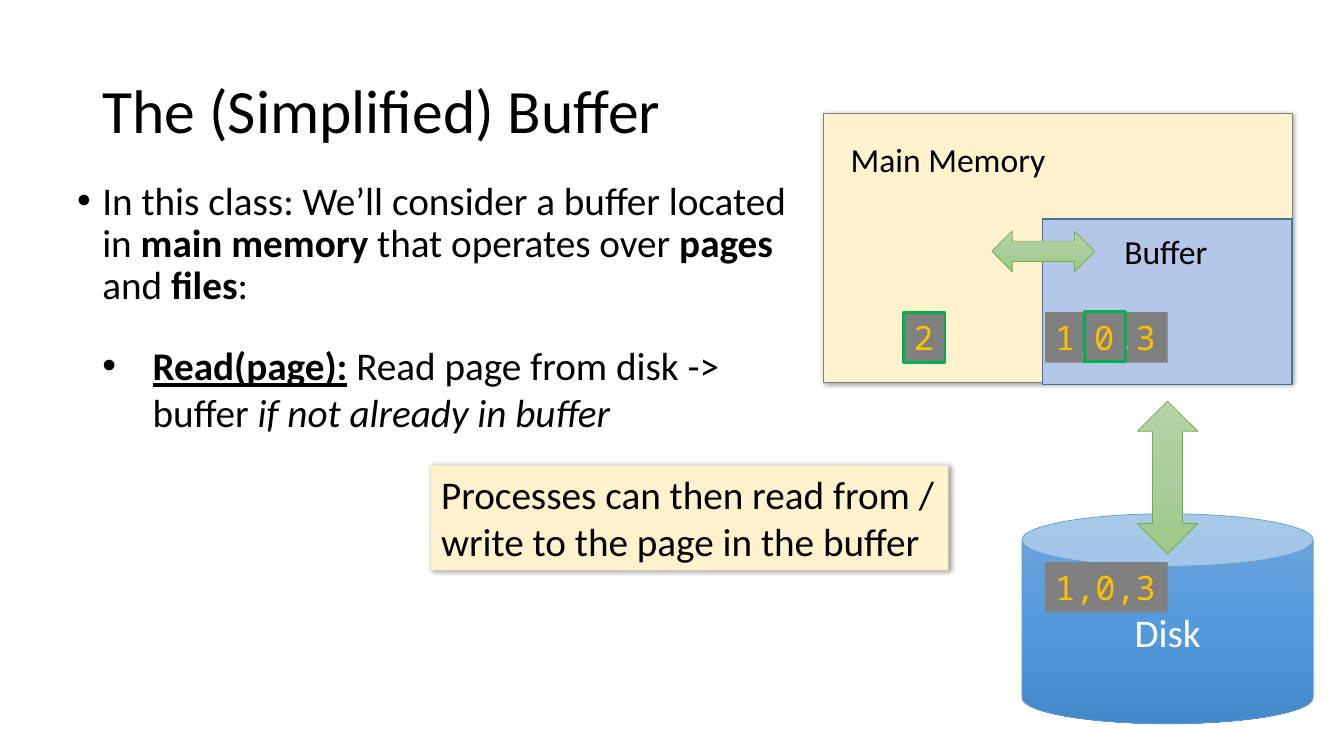
from lxml.etree import SubElement
from pptx import Presentation
from pptx.dml.color import RGBColor
from pptx.enum.shapes import MSO_SHAPE
from pptx.enum.text import MSO_ANCHOR, PP_ALIGN
from pptx.oxml import parse_xml
from pptx.oxml.ns import nsdecls, qn
from pptx.util import Pt

BLACK, CREAM, GRAY, AMBER, GREEN = "000000", "FFF2CC", "808080", "FFC000", "00B050"
ARROW_SHADES = ("B5D5A7", "AACE9A", "9CC987")
DISK_SHADES = ("71A6DB", "559BDB", "448ACA")


def rgb(color):
    """Turn a hex string into a colour."""
    return RGBColor.from_string(color)


def write(frame, runs, size=28, color=BLACK, font="Calibri", wrap=True, indent=0, spacing=None):
    """Fill a frame with one paragraph of (text, styles) runs, bulleted if indented."""
    frame.word_wrap = wrap
    frame.vertical_anchor = MSO_ANCHOR.TOP
    paragraph = frame.paragraphs[0]
    paragraph.alignment = PP_ALIGN.LEFT
    if spacing:
        paragraph.line_spacing = spacing
    if indent:
        properties = paragraph._p.get_or_add_pPr()
        properties.set("marL", str(Pt(indent)))
        properties.set("indent", str(-Pt(indent)))
        SubElement(properties, qn("a:buFont"), typeface="Arial")
        SubElement(properties, qn("a:buChar"), char="•")
    for text, styles in runs:
        run = paragraph.add_run()
        run.text = text
        run.font.name, run.font.size = font, Pt(size)
        run.font.color.rgb = rgb(color)
        run.font.bold = "b" in styles
        run.font.italic = "i" in styles
        run.font.underline = "u" in styles
    return paragraph


def add_text(slide, box, runs, **style):
    """Add a text box and return its frame."""
    frame = slide.shapes.add_textbox(*map(Pt, box)).text_frame
    write(frame, runs, **style)
    return frame


def add_block(slide, kind, box, fill, line=None, width=0.5):
    """Add a preset shape with a plain fill or a vertical gradient of three shades."""
    block = slide.shapes.add_shape(kind, *map(Pt, box))
    block.shadow.inherit = False
    if isinstance(fill, str):
        block.fill.solid()
        block.fill.fore_color.rgb = rgb(fill)
    else:
        stops = "".join(f'<a:gs pos="{50000 * i}"><a:srgbClr val="{shade}"/></a:gs>'
                        for i, shade in enumerate(fill))
        block._element.spPr.find(qn("a:prstGeom")).addnext(parse_xml(
            f'<a:gradFill {nsdecls("a")} rotWithShape="1"><a:gsLst>{stops}</a:gsLst>'
            '<a:lin ang="5400000" scaled="0"/></a:gradFill>'))
    if line:
        block.line.color.rgb = rgb(line)
        block.line.width = Pt(width)
    else:
        block.line.fill.background()
    return block


def cast_shadow(block):
    """Give a block a soft shadow to the lower right."""
    block._element.spPr.find(qn("a:effectLst")).append(parse_xml(
        f'<a:outerShdw {nsdecls("a")} blurRad="{Pt(4)}" dist="{Pt(1)}" dir="2700000" '
        'algn="tl" rotWithShape="0"><a:srgbClr val="000000"><a:alpha val="40000"/>'
        '</a:srgbClr></a:outerShdw>'))


def add_pages(slide, left, top, numbers, outline=None):
    """Add a gray tag of page numbers as wide as its text."""
    tag = add_block(slide, MSO_SHAPE.RECTANGLE, (left, top, 15 + 14.5 * len(numbers), 36),
                    GRAY, outline, 2)
    write(tag.text_frame, [(numbers, "")], 24, AMBER, "Noto Sans Mono", wrap=False)


def add_memory(slide, left, top, width, height):
    """Draw main memory with the buffer in its lower right corner."""
    cast_shadow(add_block(slide, MSO_SHAPE.RECTANGLE, (left, top, width, height), CREAM, GRAY))
    add_block(slide, MSO_SHAPE.RECTANGLE, (left + 156.5, top + 75.5, 178.5, 118),
              "B4C7E7", "43739E", 1)
    add_text(slide, (left + 12.5, top + 14.5, 155, 36), [("Main Memory", "")], size=24, wrap=False)
    add_text(slide, (left + 208, top + 80.5, 75, 36), [("Buffer", "")], size=24, wrap=False)
    add_block(slide, MSO_SHAPE.LEFT_RIGHT_ARROW, (left + 120.5, top + 84, 73.5, 29),
              ARROW_SHADES, "70AD47")
    add_pages(slide, left + 158.5, top + 142, "1,0,3")
    add_pages(slide, left + 186.5, top + 141.5, "0", GREEN)
    add_pages(slide, left + 57.5, top + 142, "2", GREEN)


def add_disk(slide, left, top, width, height):
    """Draw the disk, its pages and the arrow up to memory."""
    disk = add_block(slide, MSO_SHAPE.CAN, (left, top, width, height), DISK_SHADES, "5B9BD5")
    label = write(disk.text_frame, [("Disk", "")], color="FFFFFF")
    label.alignment = PP_ALIGN.CENTER
    disk.text_frame.vertical_anchor = MSO_ANCHOR.MIDDLE
    add_block(slide, MSO_SHAPE.UP_DOWN_ARROW, (left + 82.5, top - 80.5, 43, 109),
              ARROW_SHADES, "70AD47")
    add_pages(slide, left + 16.5, top + 34.5, "1,0,3")


def add_explanation(slide, left, top, width, height):
    """Write the introduction and, below it, the read operation."""
    add_text(slide, (left, top, width, height), [
        ("In this class: We’ll consider a buffer located in ", ""), ("main memory", "b"),
        (" that operates over ", ""), ("pages", "b"), (" and ", ""), ("files", "b"), (":", ""),
    ], indent=18, spacing=0.9)
    add_text(slide, (left + 18, top + height, 501, 75), [
        ("Read(page):", "bu"), (" ", "b"), ("Read page from disk -> buffer ", ""),
        ("if not already in buffer", "i"),
    ], indent=36)


def add_note(slide, *box):
    """Add the shaded remark."""
    note = add_block(slide, MSO_SHAPE.RECTANGLE, box, CREAM)
    cast_shadow(note)
    write(note.text_frame, [("Processes can then read from / write to the page in the buffer", "")])


def main():
    """Build and save the slide."""
    deck = Presentation()
    deck.slide_width, deck.slide_height = Pt(960), Pt(540)
    slide = deck.slides.add_slide(deck.slide_layouts[6])
    add_memory(slide, 588, 81, 335, 192)
    title = add_text(slide, (66, 29, 828, 104), [("The (Simplified) Buffer", "")],
                     size=44, spacing=0.9)
    title.vertical_anchor = MSO_ANCHOR.MIDDLE
    add_explanation(slide, 48, 126, 540, 114.5)
    add_disk(slide, 730, 367, 208, 150)
    add_note(slide, 308, 332.5, 369.5, 75)
    deck.save("out.pptx")


if __name__ == "__main__":
    main()
